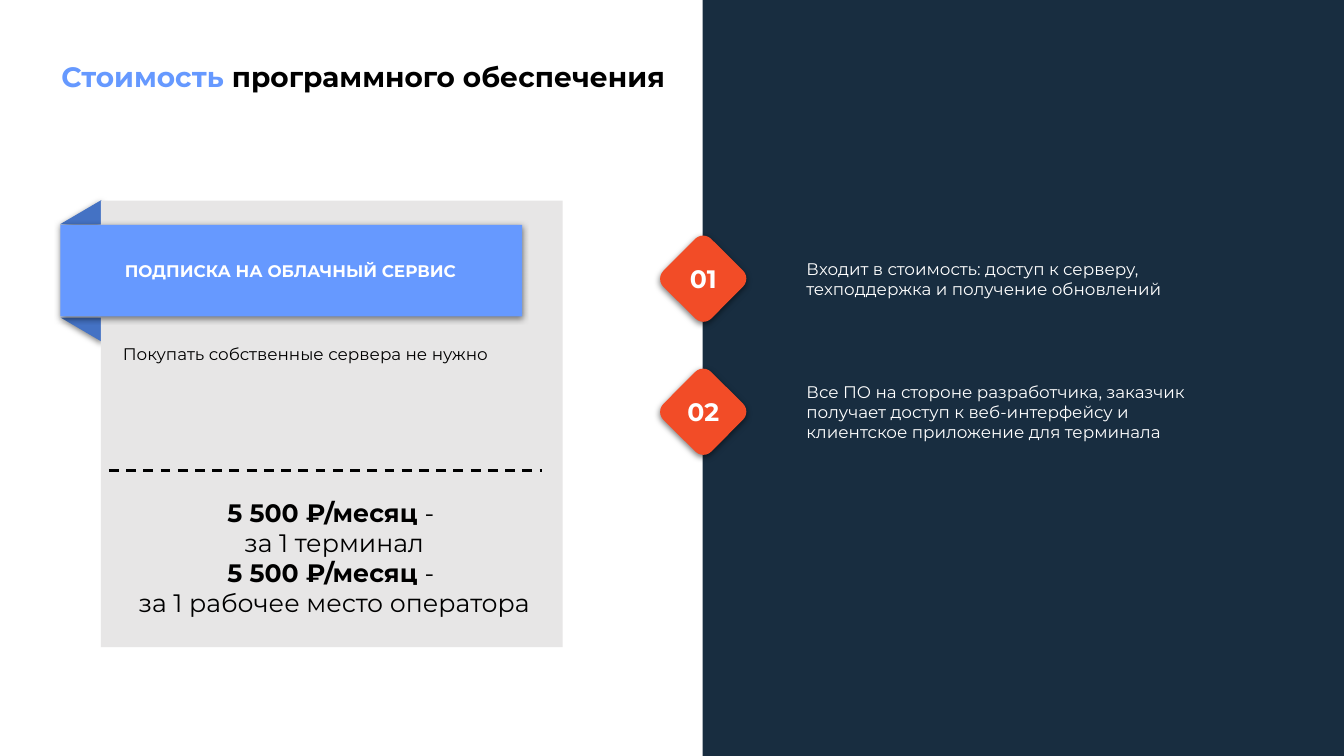
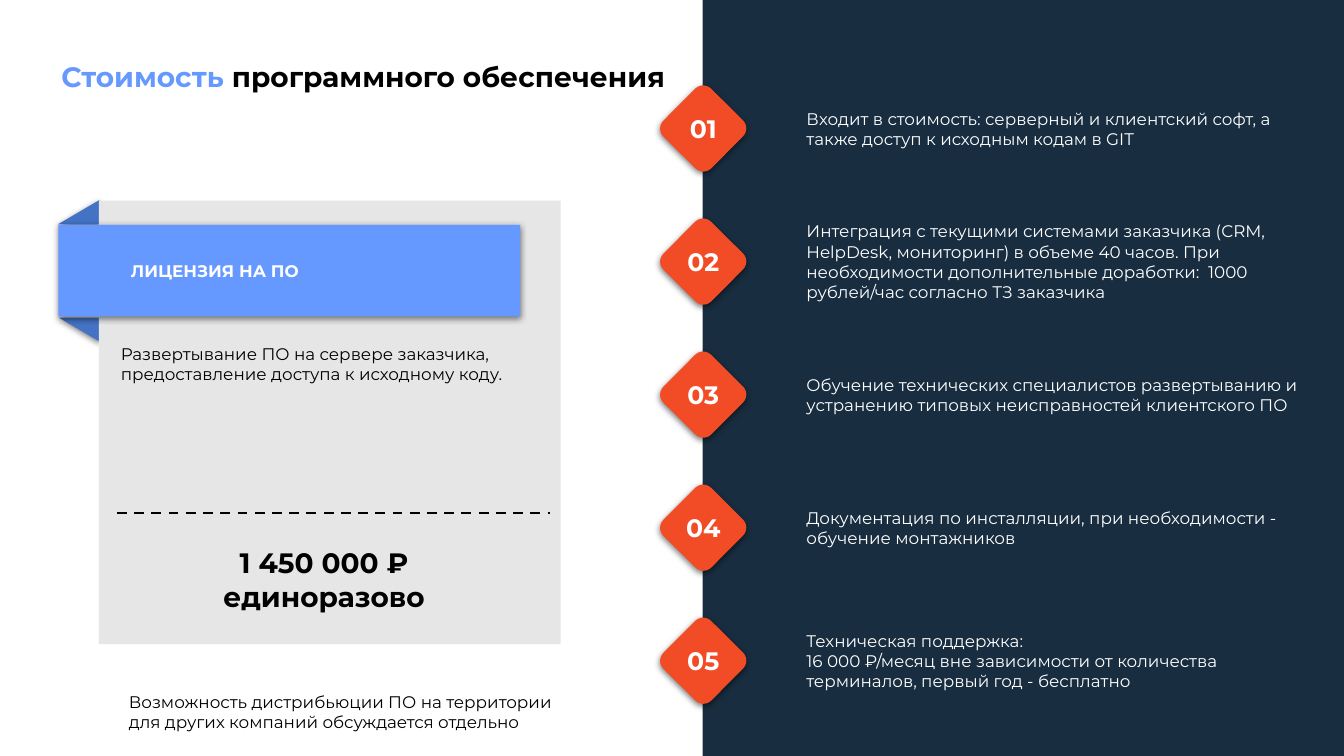
import pptx
import pptx.util
import pptx.oxml
import pptx.dml.color
import pptx.enum.dml
import pptx.enum.shapes
import pptx.enum.text

Inches = pptx.util.Inches
Pt = pptx.util.Pt
RGBColor = pptx.dml.color.RGBColor
Shape = pptx.enum.shapes.MSO_SHAPE
Align = pptx.enum.text.PP_ALIGN
Anchor = pptx.enum.text.MSO_ANCHOR

BLACK = RGBColor(0x00, 0x00, 0x00)
WHITE = RGBColor(0xFF, 0xFF, 0xFF)
BLUE = RGBColor(0x66, 0x99, 0xFF)
FOLD = RGBColor(0x44, 0x72, 0xC4)
NAVY = RGBColor(0x18, 0x2D, 0x40)
GREY = RGBColor(0xE7, 0xE6, 0xE6)
RED = RGBColor(0xF2, 0x4C, 0x27)

FONT = "Montserrat"
NS = 'xmlns:a="http://schemas.openxmlformats.org/drawingml/2006/main"'
SHADOW = (
    f'<a:effectLst {NS}><a:outerShdw blurRad="57150" dist="19050" dir="5400000" '
    'algn="ctr" rotWithShape="0"><a:srgbClr val="000000"><a:alpha val="50000"/>'
    '</a:srgbClr></a:outerShdw></a:effectLst>'
)

STEP = 1.32    # distance between badges
BADGE = 0.67   # side of a badge
AXIS = 6.975   # centre line of the badges


class Deck:
    def __init__(self):
        self.show = pptx.Presentation()
        self.show.slide_width = Inches(13.33)
        self.show.slide_height = Inches(7.5)
        self.slide = None

    def page(self):
        """Start a slide with the shared title and dark side band."""
        self.slide = self.show.slides.add_slide(self.show.slide_layouts[5])
        title = self.slide.shapes.title
        title.left, title.top = Inches(0.51), Inches(0.41)
        title.width, title.height = Inches(6.28), Inches(0.73)
        frame = title.text_frame
        self.put(frame, "Стоимость", 20, BLUE, True)
        frame.auto_size = pptx.enum.text.MSO_AUTO_SIZE.NONE
        frame.vertical_anchor = Anchor.MIDDLE
        line = frame.paragraphs[0]
        line.line_spacing = 0.9
        self.add(line, " программного обеспечения", 20, BLACK, True)
        self.block(Shape.RECTANGLE, 6.97, 0, 6.36, 7.5, NAVY)

    def style(self, run, size, color, bold):
        font = run.font
        font.name, font.size, font.bold = FONT, Pt(size), bold
        font.color.rgb = color

    def add(self, line, text, size, color, bold=False):
        run = line.add_run()
        run.text = text
        self.style(run, size, color, bold)

    def put(self, frame, text, size, color, bold=False, align=Align.LEFT):
        frame.text = text
        for line in frame.paragraphs:
            line.alignment = align
            for run in line.runs:
                self.style(run, size, color, bold)

    def text(self, x, y, w, h, text, size=12, color=BLACK, bold=False,
             align=Align.LEFT, anchor=Anchor.TOP):
        box = self.slide.shapes.add_textbox(Inches(x), Inches(y), Inches(w), Inches(h))
        frame = box.text_frame
        frame.word_wrap = True
        frame.vertical_anchor = anchor
        self.put(frame, text, size, color, bold, align)
        return frame

    def block(self, kind, x, y, w, h, color, turn=0, shade=False):
        shape = self.slide.shapes.add_shape(kind, Inches(x), Inches(y), Inches(w), Inches(h))
        shape.fill.solid()
        shape.fill.fore_color.rgb = color
        shape.line.fill.background()
        shape.rotation = turn
        if shade:
            shape._element.spPr.append(pptx.oxml.parse_xml(SHADOW))
        else:
            shape.shadow.inherit = False

    def card(self, x, h, label, inset, note):
        """Grey card with a folded ribbon starting at x."""
        self.block(Shape.RIGHT_TRIANGLE, x + 0.08, 1.9, 0.24, 0.41, FOLD, 270, True)
        self.block(Shape.RIGHT_TRIANGLE, x, 3.15, 0.41, 0.24, FOLD, 180, True)
        self.block(Shape.RECTANGLE, x + 0.4, 1.99, 4.58, h, GREY)
        self.block(Shape.RECTANGLE, x, 2.23, 4.58, 0.91, BLUE, shade=True)
        self.text(x + inset, 2.33, 3.96, 0.71, label, 12, WHITE, True, anchor=Anchor.MIDDLE)
        self.text(x + 0.52, 3.36, 4.02, 1.31, note)

    def rule(self, x, y, w):
        line = self.slide.shapes.add_connector(
            pptx.enum.shapes.MSO_CONNECTOR.STRAIGHT,
            Inches(x), Inches(y), Inches(x + w), Inches(y))
        line.line.color.rgb = BLACK
        line.line.width = Pt(1.75)
        line.line.dash_style = pptx.enum.dml.MSO_LINE.DASH
        line._element.spPr.append(pptx.oxml.parse_xml(f"<a:effectLst {NS}/>"))

    def price(self, x, y, w, h, text, size, bold=False):
        return self.text(x, y, w, h, text, size, BLACK, bold, Align.CENTER, Anchor.MIDDLE)

    def items(self, top, width, texts):
        """Numbered badges, each with its text centred beside it."""
        for i, text in enumerate(texts):
            y = top + i * STEP
            mid = y + BADGE / 2
            self.block(Shape.ROUNDED_RECTANGLE, AXIS - BADGE / 2, y, BADGE, BADGE,
                       RED, 44.8, True)
            badge = self.text(AXIS - 0.27, mid - 0.25, 0.54, 0.5, f"{i + 1:02}", 18,
                              WHITE, True, Align.CENTER, Anchor.MIDDLE)
            badge.margin_left = badge.margin_right = 0
            self.text(7.9, mid - 0.55, width, 1.1, text, 12, WHITE, anchor=Anchor.MIDDLE)


def main():
    deck = Deck()

    # Cloud subscription
    deck.page()
    deck.card(0.6, 4.43, "ПОДПИСКА НА ОБЛАЧНЫЙ СЕРВИС", 0.54,
              "Покупать собственные сервера не нужно")
    deck.rule(1.08, 4.67, 4.3)
    frame = deck.price(1.2, 4.92, 4.23, 1.22,
                       "5 500 ₽/месяц \nза 1 терминал\n"
                       "5 500 ₽/месяц \nза 1 рабочее место оператора", 18)
    for line in frame.paragraphs[::2]:
        line.runs[0].font.bold = True
        deck.add(line, "- ", 18, BLACK)
    deck.items(2.43, 4.29, [
        "Входит в стоимость: доступ к серверу, техподдержка и получение обновлений",
        "Все ПО на стороне разработчика, заказчик получает доступ к "
        "веб-интерфейсу и клиентское приложение для терминала",
    ])

    # Software licence
    deck.page()
    deck.card(0.58, 4.4, "ЛИЦЕНЗИЯ НА ПО", 0.62,
              "Развертывание ПО на сервере заказчика, предоставление доступа "
              "к исходному коду.")
    deck.rule(1.16, 5.09, 4.3)
    deck.price(1.35, 5.2, 3.73, 1.1, "1 450 000 ₽\nединоразово", 20, True)
    deck.text(1.18, 6.81, 4.43, 0.65,
              "Возможность дистрибьюции ПО на территории для других компаний "
              "обсуждается отдельно")
    deck.items(0.94, 5.11, [
        "Входит в стоимость: серверный и клиентский софт, а также доступ к "
        "исходным кодам в GIT",
        "Интеграция с текущими системами заказчика (CRM, HelpDesk, мониторинг) "
        "в объеме 40 часов. При необходимости дополнительные доработки:  1000 "
        "рублей/час согласно ТЗ заказчика",
        "Обучение технических специалистов развертыванию и устранению типовых "
        "неисправностей клиентского ПО",
        "Документация по инсталляции, при необходимости - обучение монтажников",
        "Техническая поддержка:\n16 000 ₽/месяц вне зависимости от количества "
        "терминалов, первый год - бесплатно",
    ])

    deck.show.save("out.pptx")


if __name__ == "__main__":
    main()
